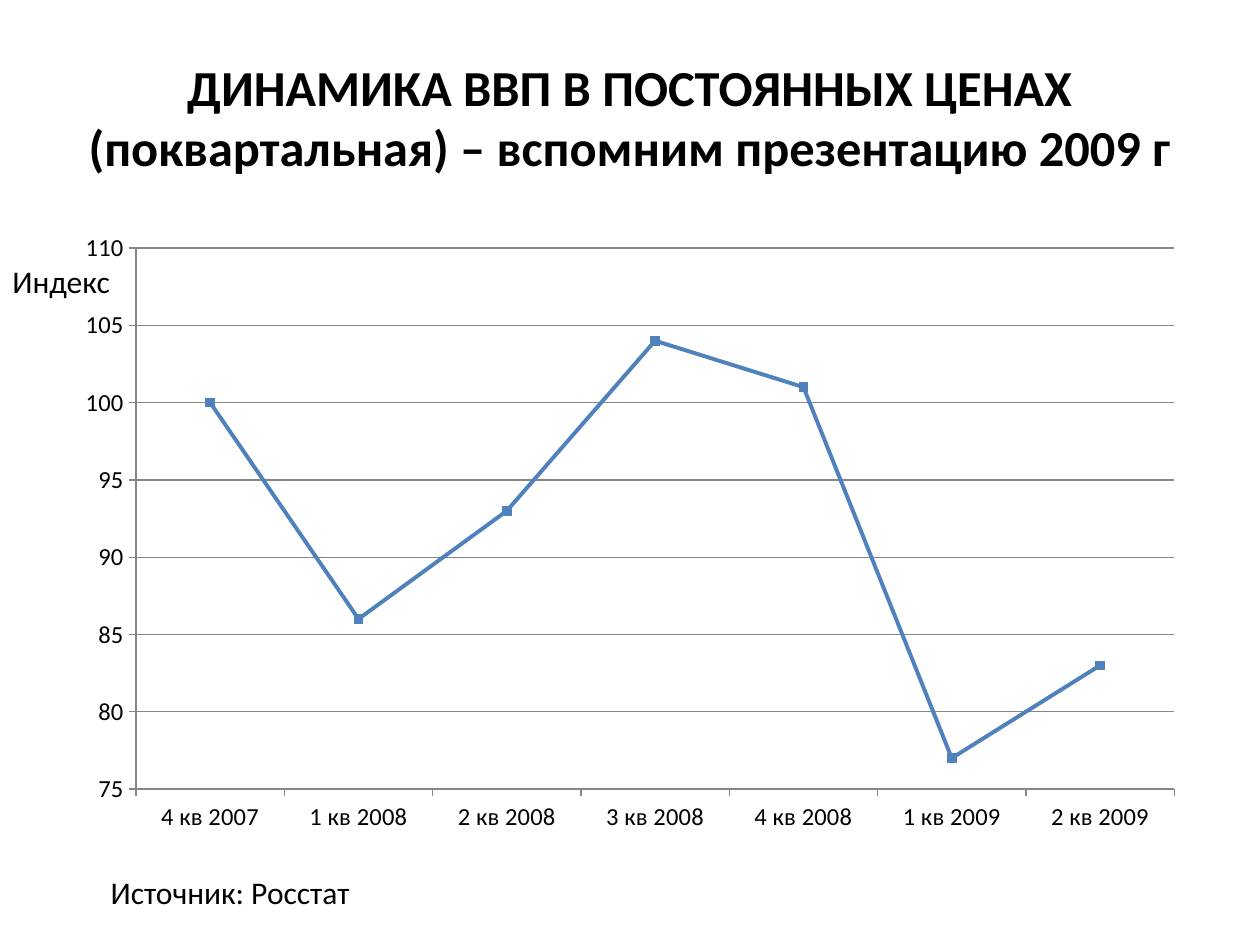
from dataclasses import dataclass

from pptx import Presentation
from pptx.chart.data import CategoryChartData as ChartData
from pptx.dml.color import RGBColor
from pptx.enum.chart import XL_CHART_TYPE as Kind
from pptx.enum.chart import XL_MARKER_STYLE as Mark
from pptx.enum.chart import XL_TICK_MARK as Tick
from pptx.enum.text import MSO_ANCHOR as Anchor
from pptx.enum.text import MSO_AUTO_SIZE as Fit
from pptx.enum.text import PP_ALIGN as Align
from pptx.util import Inches, Pt

FONT = "Calibri"
BLACK, GREY, BLUE = "000000", "868686", "4F81BD"


@dataclass
class Label:
    text: str
    left: float
    top: float
    width: float
    height: float = 0.4


LABELS = [
    Label("Источник: Росстат", 0.78, 6.88, 2.2),
    Label("Индекс", 0, 2.03, 0.98),
]
INDEX = {
    "4 кв 2007": 100,
    "1 кв 2008": 86,
    "2 кв 2008": 93,
    "3 кв 2008": 104,
    "4 кв 2008": 101,
    "1 кв 2009": 77,
    "2 кв 2009": 83,
}


def color(code: str) -> RGBColor:
    return RGBColor.from_string(code)


def style(font, size: float, bold: bool = False) -> None:
    font.name = FONT
    font.size = Pt(size)
    font.bold = bold
    font.color.rgb = color(BLACK)


def stroke(line, code: str, width: float) -> None:
    line.color.rgb = color(code)
    line.width = Pt(width)


def add_title(slide) -> None:
    title = slide.shapes.title
    title.left, title.top = Inches(0.5), Inches(0.3)
    title.width, title.height = Inches(9), Inches(1.25)
    frame = title.text_frame
    frame.word_wrap = True
    frame.auto_size = Fit.NONE
    frame.vertical_anchor = Anchor.MIDDLE
    para = frame.paragraphs[0]
    para.text = "ДИНАМИКА ВВП В ПОСТОЯННЫХ ЦЕНАХ\v(поквартальная) – вспомним презентацию 2009 г"
    para.alignment = Align.CENTER
    for run in para.runs:
        style(run.font, 28.8, True)


def add_label(slide, label: Label) -> None:
    box = slide.shapes.add_textbox(
        Inches(label.left), Inches(label.top), Inches(label.width), Inches(label.height)
    )
    frame = box.text_frame
    frame.text = label.text
    frame.word_wrap = False
    frame.auto_size = Fit.SHAPE_TO_FIT_TEXT
    style(frame.paragraphs[0].runs[0].font, 18)


def add_graph(slide) -> None:
    data = ChartData()
    data.categories = list(INDEX)
    data.add_series("Series 1", list(INDEX.values()))
    chart = slide.shapes.add_chart(
        Kind.LINE_MARKERS, Inches(0.5), Inches(1.75), Inches(9), Inches(4.95), data
    ).chart
    chart.has_legend = False
    chart.has_title = False
    style(chart.font, 10)

    for axis in (chart.category_axis, chart.value_axis):
        axis.major_tick_mark = Tick.OUTSIDE
        axis.minor_tick_mark = Tick.NONE
        style(axis.tick_labels.font, 14)
        stroke(axis.format.line, GREY, 0.75)

    scale = chart.value_axis
    scale.minimum_scale, scale.maximum_scale = 75, 110
    scale.major_unit = 5
    scale.has_major_gridlines = True
    stroke(scale.major_gridlines.format.line, GREY, 0.75)

    plot = chart.plots[0]
    plot.vary_by_categories = False
    line = plot.series[0]
    line.smooth = False
    stroke(line.format.line, BLUE, 2.25)
    mark = line.marker
    mark.style, mark.size = Mark.SQUARE, 5
    mark.format.fill.solid()
    mark.format.fill.fore_color.rgb = color(BLUE)
    stroke(mark.format.line, BLUE, 0.75)


def main() -> None:
    deck = Presentation()
    deck.slide_width, deck.slide_height = Inches(10), Inches(7.5)
    slide = deck.slides.add_slide(deck.slide_layouts[5])
    add_title(slide)
    add_graph(slide)
    for label in LABELS:
        add_label(slide, label)
    deck.save("out.pptx")


if __name__ == "__main__":
    main()
